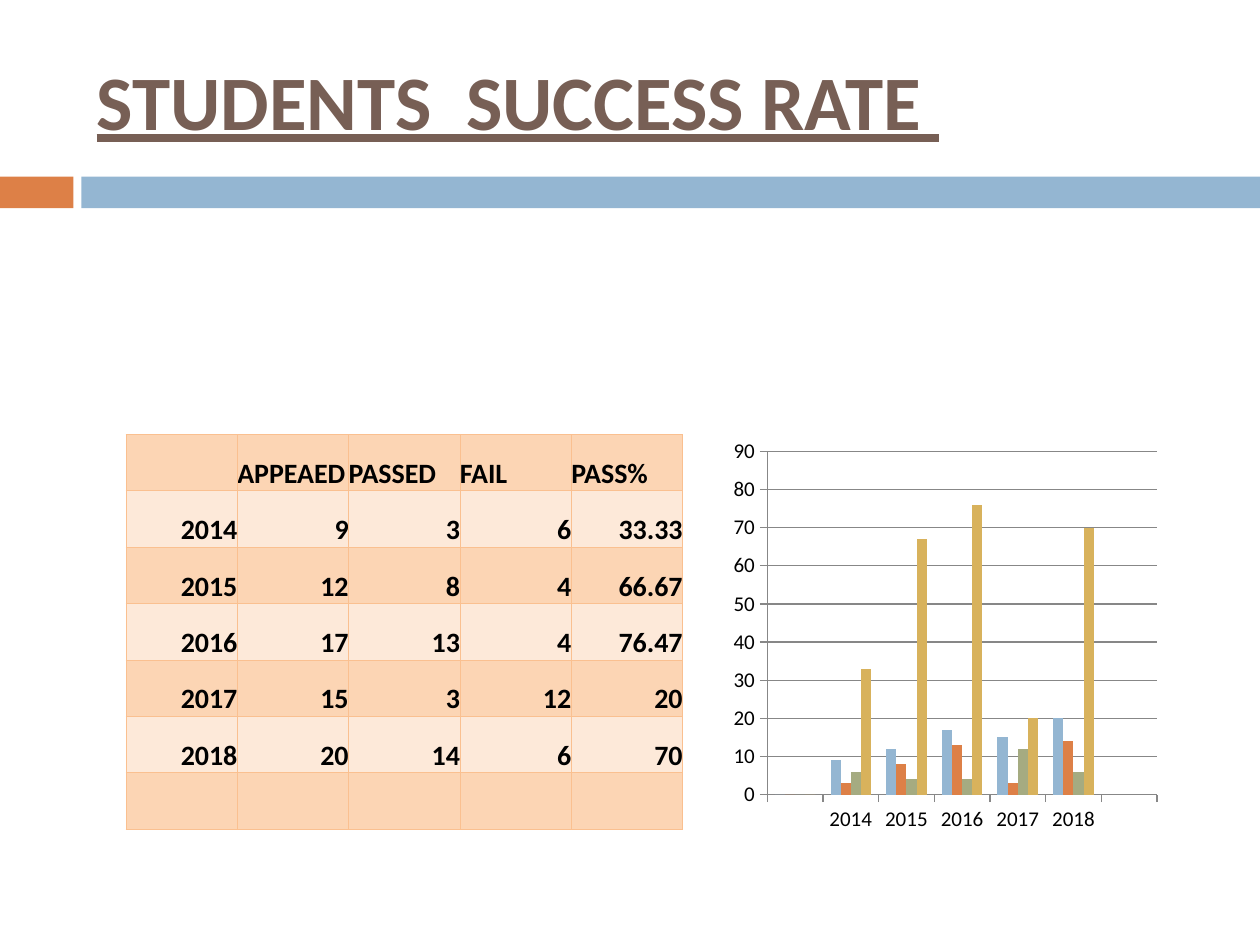
"""Build the students success rate slide with a results table and a column chart."""
from lxml import etree
from pptx import Presentation, util as u
from pptx.chart.data import CategoryChartData
from pptx.dml.color import RGBColor
from pptx.enum import chart as ch, shapes, text
from pptx.oxml import ns

TITLE = "STUDENTS  SUCCESS RATE "
HEADINGS = ["", "APPEAED", "PASSED", "FAIL", "PASS%"]
RESULTS = [
    ("2014", 9, 3, 6, 33.33),
    ("2015", 12, 8, 4, 66.67),
    ("2016", 17, 13, 4, 76.47),
    ("2017", 15, 3, 12, 20),
    ("2018", 20, 14, 6, 70),
]
COLORS = {
    "title": "775F55", "text": "000000", "axis": "878787",
    "orange": "DD8047", "blue": "94B6D2", "green": "A5AB81", "gold": "D8B25C",
    "dark_row": "FCD5B4", "light_row": "FDE9D9", "border": "FAC090",
}
BANDS = [("orange", 0, 1.48), ("blue", 1.64, 23.76)]
SERIES_COLORS = ["blue", "orange", "green", "gold"]
FONT = "Calibri"
TABLE_WIDTH, TABLE_HEIGHT = 11.22, 9.1


def rgb(name):
    return RGBColor.from_string(COLORS[name])


def style_font(font, size, color="text", bold=None):
    font.name, font.size, font.bold = FONT, u.Pt(size), bold
    font.color.rgb = rgb(color)


def add_bands(slide):
    for color, left, width in BANDS:
        band = slide.shapes.add_shape(
            shapes.MSO_SHAPE.RECTANGLE, u.Cm(left), u.Cm(3.56), u.Cm(width), u.Cm(0.64))
        band.shadow.inherit = False
        band.fill.solid()
        band.fill.fore_color.rgb = rgb(color)
        band.line.fill.background()


def add_title(slide):
    frame = slide.shapes.add_textbox(u.Cm(1.7), u.Cm(0.64), u.Cm(22.66), u.Cm(2.74)).text_frame
    frame.word_wrap = True
    frame.vertical_anchor = text.MSO_ANCHOR.MIDDLE
    heading = frame.paragraphs[0]
    heading.text = TITLE
    style_font(heading.font, 44, "title", True)
    heading.font.underline = True


def set_borders(cell, sides):
    properties = cell._tc.get_or_add_tcPr()
    for index, side in enumerate(sides):
        line = etree.Element(ns.qn(f"a:ln{side}"), w=str(u.Pt(0.5)))
        fill = etree.SubElement(line, ns.qn("a:solidFill"))
        etree.SubElement(fill, ns.qn("a:srgbClr"), val=COLORS["border"])
        properties.insert(index, line)


def fill_cell(cell, value, row):
    if row == 0:
        cell.fill.background()
        set_borders(cell, "B")
        return
    cell.fill.solid()
    cell.fill.fore_color.rgb = rgb("dark_row" if row % 2 else "light_row")
    set_borders(cell, "LRTB")
    cell.margin_left = cell.margin_right = cell.margin_top = cell.margin_bottom = 0
    cell.vertical_anchor = text.MSO_ANCHOR.BOTTOM
    entry = cell.text_frame.paragraphs[0]
    entry.text = str(value)
    entry.alignment = text.PP_ALIGN.LEFT if row == 1 else text.PP_ALIGN.RIGHT
    style_font(entry.font, 16, bold=True)


def add_results_table(slide):
    blank_row = [""] * len(HEADINGS)
    rows = [blank_row, HEADINGS, *RESULTS, blank_row]
    table = slide.shapes.add_table(
        len(rows), len(HEADINGS), u.Cm(2.54), u.Cm(7.62),
        u.Cm(TABLE_WIDTH), u.Cm(TABLE_HEIGHT)).table
    table.first_row = table.horz_banding = False
    for row, values in enumerate(rows):
        for column, value in enumerate(values):
            fill_cell(table.cell(row, column), value, row)


def add_results_chart(slide):
    years, *measures = zip(*RESULTS)
    data = CategoryChartData()
    data.categories = ["", *years, ""]
    for number, values in enumerate(measures, 1):
        data.add_series(f"Series {number}", [0, *map(round, values), None])
    chart = slide.shapes.add_chart(
        ch.XL_CHART_TYPE.COLUMN_CLUSTERED, u.Cm(14.61), u.Cm(8.68),
        u.Cm(8.89), u.Cm(8.26), data).chart
    chart.has_legend = chart.has_title = False
    style_font(chart.font, 12)
    plot = chart.plots[0]
    plot.vary_by_categories = False
    plot.gap_width, plot.overlap = 150, 0
    for series, color in zip(plot.series, SERIES_COLORS):
        series.format.fill.solid()
        series.format.fill.fore_color.rgb = rgb(color)
    scale = chart.value_axis
    scale.minimum_scale, scale.maximum_scale, scale.major_unit = 0, 90, 10
    scale.has_major_gridlines = True
    for axis in (chart.category_axis, scale):
        axis.major_tick_mark = ch.XL_TICK_MARK.OUTSIDE
    for lines in (chart.category_axis, scale, scale.major_gridlines):
        lines.format.line.color.rgb = rgb("axis")
        lines.format.line.width = u.Pt(0.75)


def main():
    deck = Presentation()
    deck.slide_width, deck.slide_height = u.Cm(25.4), u.Cm(19.05)
    slide = deck.slides.add_slide(deck.slide_layouts[6])
    add_bands(slide)
    add_title(slide)
    add_results_table(slide)
    add_results_chart(slide)
    deck.save("out.pptx")


if __name__ == "__main__":
    main()
